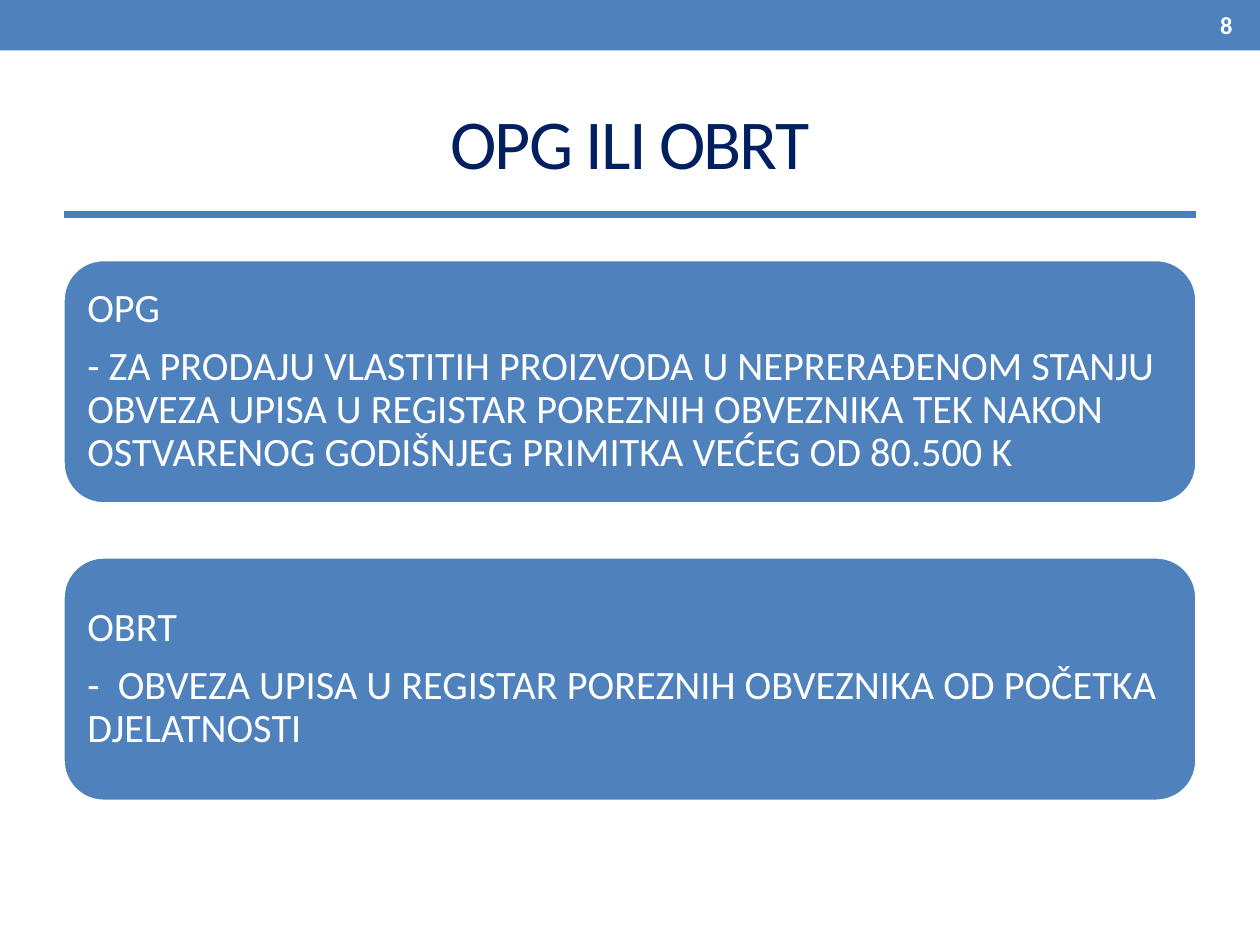
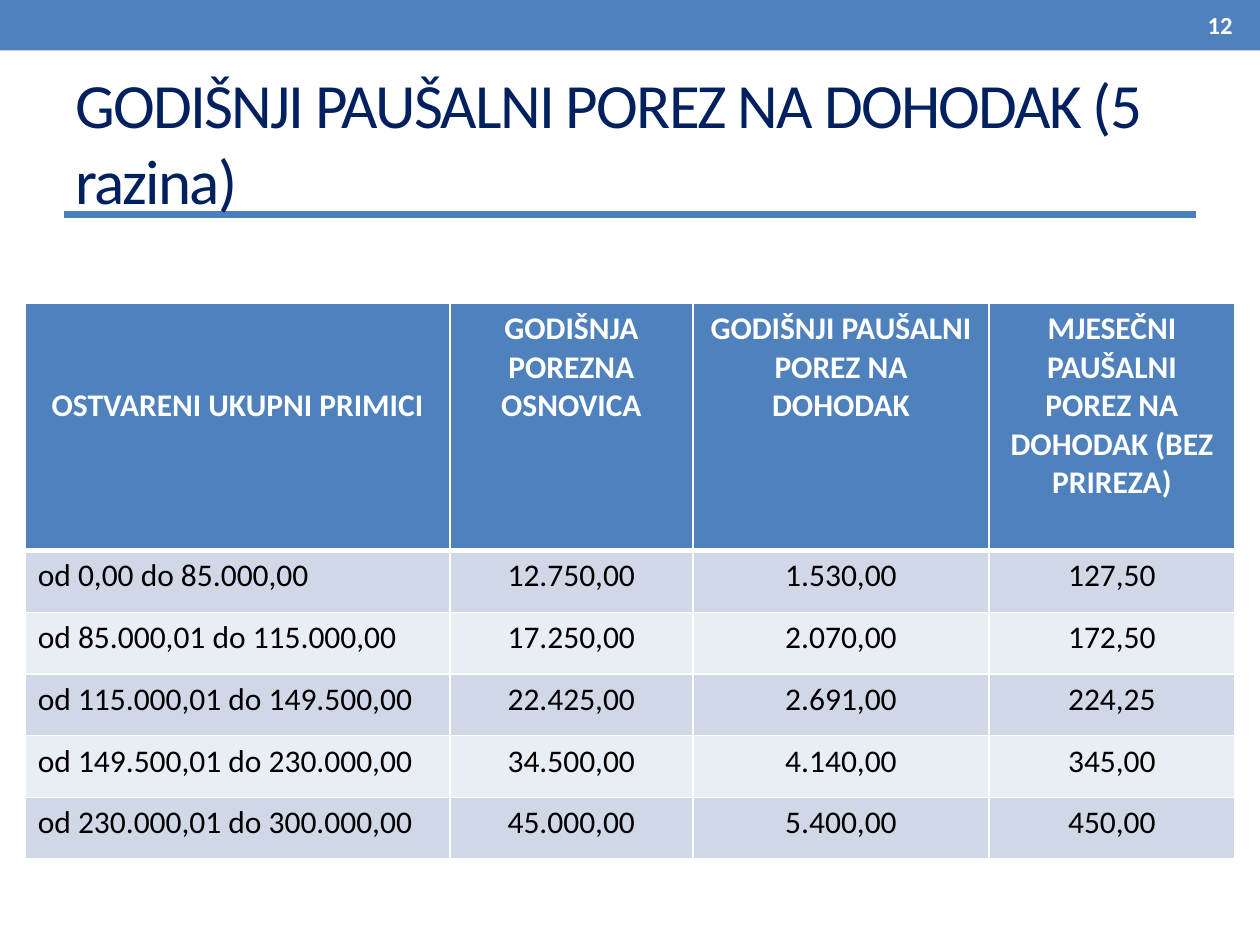
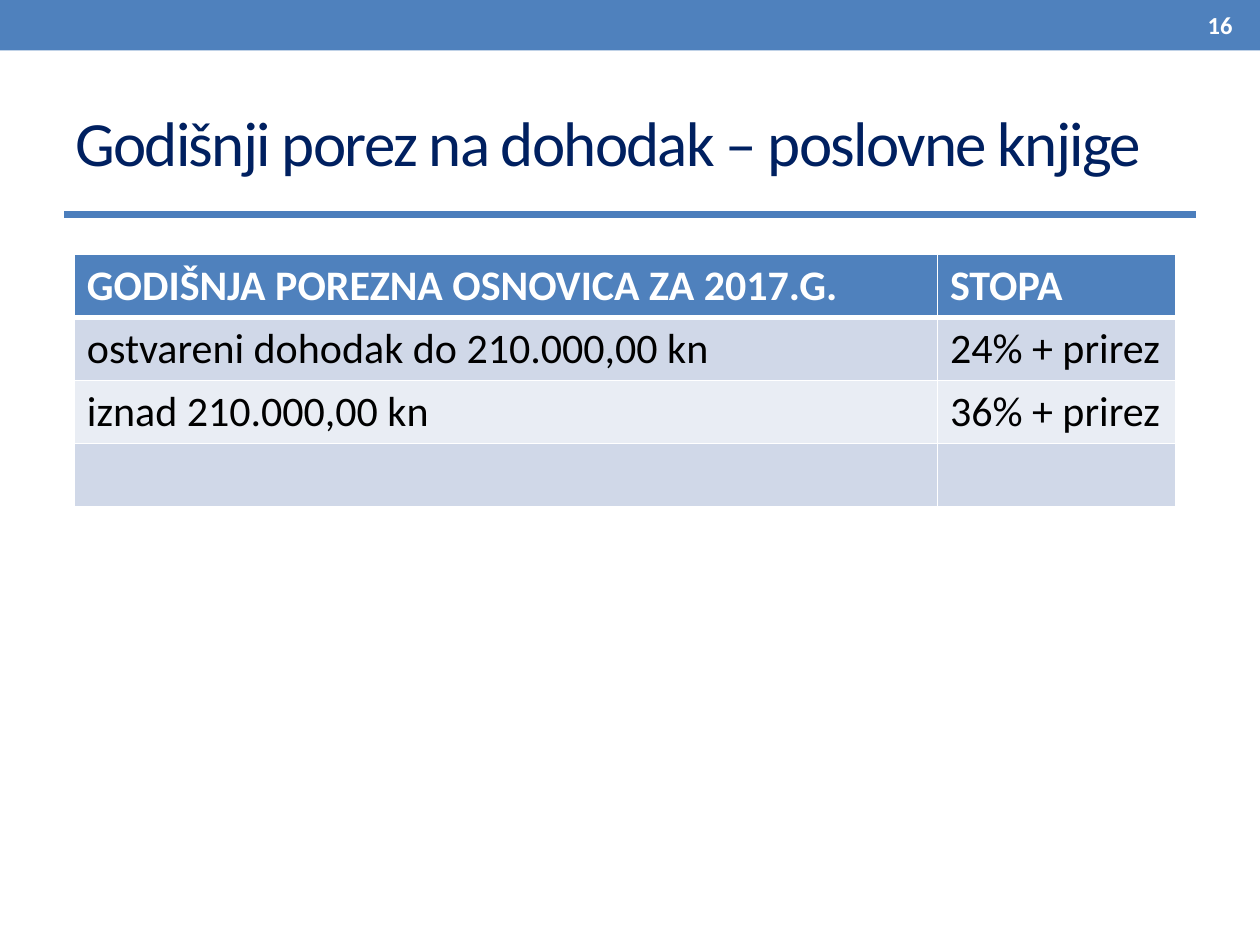
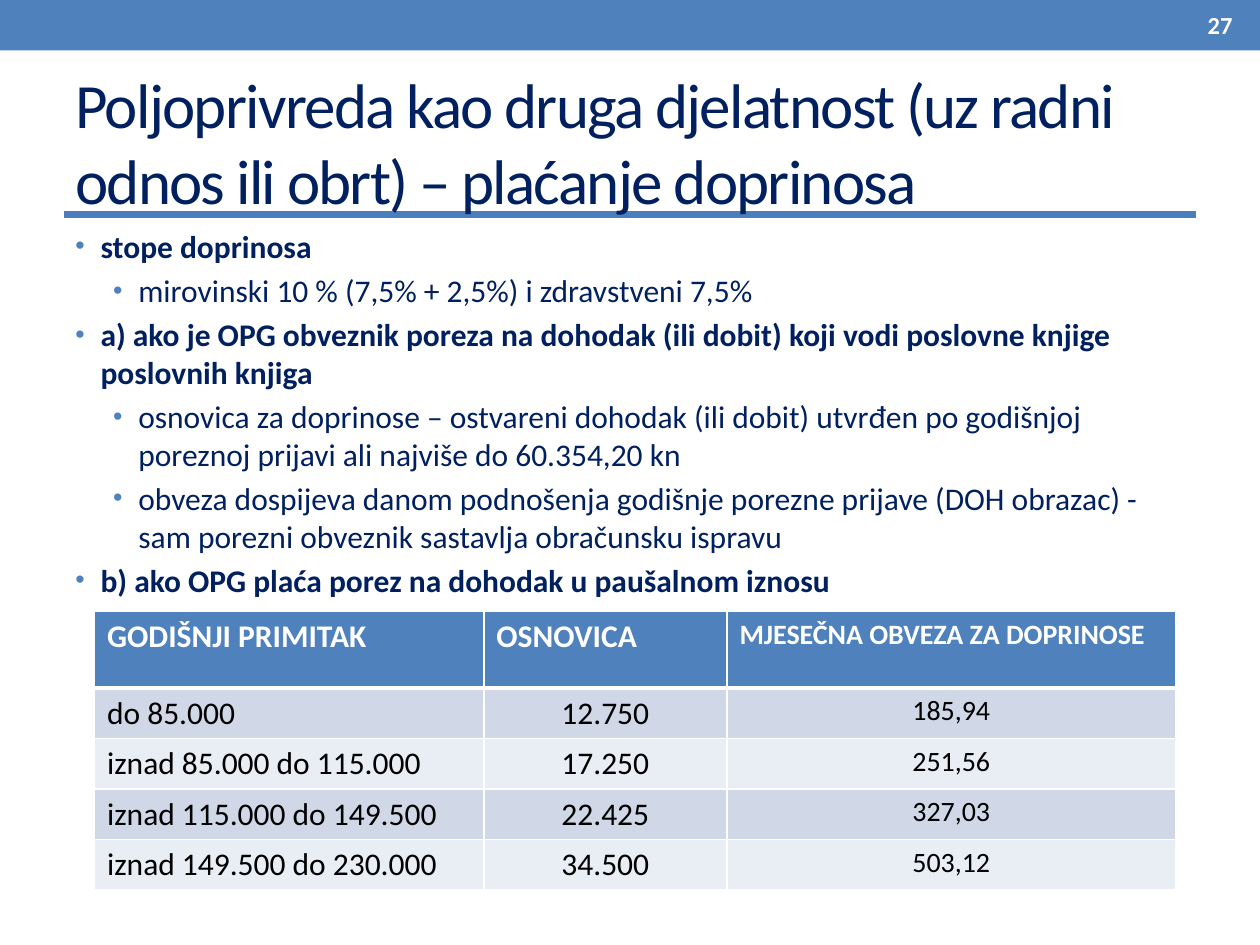
"""Build four slides on taxes and contributions for family farms and crafts."""
from lxml import etree
from pptx import Presentation
from pptx.dml.color import RGBColor
from pptx.enum.shapes import MSO_CONNECTOR, MSO_SHAPE
from pptx.enum.text import MSO_ANCHOR, PP_ALIGN
from pptx.oxml.ns import qn
from pptx.util import Inches, Pt

BLUE = RGBColor(0x4F, 0x81, 0xBD)
RULE_BLUE = RGBColor(0x4B, 0x7E, 0xBC)
NAVY = RGBColor(0x00, 0x20, 0x60)
PALE = RGBColor(0xD0, 0xD8, 0xE8)
PALER = RGBColor(0xE9, 0xED, 0xF4)
WHITE = RGBColor(0xFF, 0xFF, 0xFF)
BLACK = RGBColor(0x00, 0x00, 0x00)
LEFT, CENTER, RIGHT = PP_ALIGN.LEFT, PP_ALIGN.CENTER, PP_ALIGN.RIGHT
TOP, MIDDLE = MSO_ANCHOR.TOP, MSO_ANCHOR.MIDDLE
FONT = "Calibri"

CARDS = [
    ["OPG",
     "- ZA PRODAJU VLASTITIH PROIZVODA U NEPRERAĐENOM STANJU OBVEZA UPISA U REGISTAR "
     "POREZNIH OBVEZNIKA TEK NAKON OSTVARENOG GODIŠNJEG PRIMITKA VEĆEG OD 80.500 K"],
    ["OBRT",
     "-  OBVEZA UPISA U REGISTAR POREZNIH OBVEZNIKA OD POČETKA DJELATNOSTI"],
]

CONTRIBUTIONS = [
    (0, "stope doprinosa"),
    (1, "mirovinski 10 % (7,5% + 2,5%) i zdravstveni 7,5%"),
    (0, "a) ako je OPG obveznik poreza na dohodak (ili dobit) koji vodi poslovne knjige "
        "poslovnih knjiga"),
    (1, "osnovica za doprinose – ostvareni dohodak (ili dobit) utvrđen po godišnjoj "
        "poreznoj prijavi ali najviše do 60.354,20 kn"),
    (1, "obveza dospijeva danom podnošenja godišnje porezne prijave (DOH obrazac) - "
        "sam porezni obveznik sastavlja obračunsku ispravu"),
    (0, "b) ako OPG plaća porez na dohodak u paušalnom iznosu"),
]

FLAT_TAX = {
    "at": (0.2, 2.41),
    "widths": [3.37, 1.93, 2.35, 1.95],
    "heights": (1.96, 0.49),
    "sizes": [18, 18, 18, 18],
    "header_align": [CENTER] * 4,
    "body_align": [LEFT, CENTER, CENTER, CENTER],
    "rows": [
        ("OSTVARENI UKUPNI PRIMICI", "GODIŠNJA POREZNA OSNOVICA",
         "GODIŠNJI PAUŠALNI POREZ NA DOHODAK",
         "MJESEČNI PAUŠALNI POREZ NA DOHODAK (BEZ PRIREZA)"),
        ("od 0,00 do 85.000,00", "12.750,00", "1.530,00", "127,50"),
        ("od 85.000,01 do 115.000,00", "17.250,00", "2.070,00", "172,50"),
        ("od 115.000,01 do 149.500,00", "22.425,00", "2.691,00", "224,25"),
        ("od 149.500,01 do 230.000,00", "34.500,00", "4.140,00", "345,00"),
        ("od 230.000,01 do 300.000,00", "45.000,00", "5.400,00", "450,00"),
    ],
}

TAX_RATES = {
    "at": (0.59, 2.02),
    "widths": [6.85, 1.89],
    "heights": (0.5, 0.5),
    "sizes": [24, 24],
    "header_align": [LEFT] * 2,
    "body_align": [LEFT] * 2,
    "rows": [
        ("GODIŠNJA POREZNA OSNOVICA ZA 2017.G.", "STOPA"),
        ("ostvareni dohodak do 210.000,00 kn", "24% + prirez"),
        ("iznad 210.000,00 kn", "36% + prirez"),
        ("", ""),
    ],
}

MONTHLY_DUES = {
    "at": (0.75, 4.85),
    "widths": [3.09, 1.93, 3.56],
    "heights": (0.61, 0.4),
    "sizes": [18, 18, 16],
    "header_align": [LEFT] * 3,
    "body_align": [LEFT, CENTER, CENTER],
    "rows": [
        ("GODIŠNJI PRIMITAK", "OSNOVICA", "MJESEČNA OBVEZA ZA DOPRINOSE"),
        ("do 85.000", "12.750", "185,94"),
        ("iznad 85.000 do 115.000", "17.250", "251,56"),
        ("iznad 115.000 do 149.500", "22.425", "327,03"),
        ("iznad 149.500 do 230.000", "34.500", "503,12"),
    ],
}


def style(paragraph, size, color, bold=False, align=LEFT):
    paragraph.alignment = align
    font = paragraph.font
    font.name, font.size, font.bold = FONT, Pt(size), bold
    font.color.rgb = color


def add_text_box(slide, left, top, width, height, anchor):
    frame = slide.shapes.add_textbox(
        Inches(left), Inches(top), Inches(width), Inches(height)).text_frame
    frame.word_wrap = True
    frame.vertical_anchor = anchor
    return frame


def add_block(slide, preset, left, top, width, height):
    block = slide.shapes.add_shape(
        preset, Inches(left), Inches(top), Inches(width), Inches(height))
    block.shadow.inherit = False
    block.fill.solid()
    block.fill.fore_color.rgb = BLUE
    block.line.fill.background()
    return block


def add_page(deck, number, title, size=36, align=LEFT):
    slide = deck.slides.add_slide(deck.slide_layouts[6])
    add_block(slide, MSO_SHAPE.RECTANGLE, 0, 0, 10, 0.4)

    rule = slide.shapes.add_connector(
        MSO_CONNECTOR.STRAIGHT, Inches(0.51), Inches(1.7), Inches(9.49), Inches(1.7))
    rule.line.color.rgb = RULE_BLUE
    rule.line.width = Pt(4)
    etree.SubElement(rule._element.spPr, qn("a:effectLst"))

    heading = add_text_box(slide, 0.5, 0.58, 9, 1.08, MIDDLE).paragraphs[0]
    run = heading.add_run()
    run.text = title
    run._r.get_or_add_rPr().set("spc", "-100")
    style(heading, size, NAVY, align=align)

    page_number = add_text_box(slide, 9.09, 0.02, 0.79, 0.36, MIDDLE).paragraphs[0]
    page_number.text = str(number)
    style(page_number, 14, WHITE, True, RIGHT)
    return slide


def add_cards(slide, cards):
    height, pitch = 1.94, 2.36
    for index, lines in enumerate(cards):
        card = add_block(slide, MSO_SHAPE.ROUNDED_RECTANGLE,
                         0.5, 2.06 + index * pitch, 9, height)
        card.line.color.rgb = WHITE
        card.line.width = Pt(2)
        frame = card.text_frame
        frame.word_wrap = True
        frame.vertical_anchor = MIDDLE
        frame.margin_left = frame.margin_right = Inches(0.1)
        frame.margin_top = frame.margin_bottom = Inches(0.1)
        frame.text = "\n".join(lines)
        for paragraph in frame.paragraphs:
            paragraph.line_spacing = 0.9
            paragraph.space_after = Pt(8)
            style(paragraph, 23, WHITE)


def add_bullet(paragraph, margin):
    properties = paragraph._p.get_or_add_pPr()
    properties.set("marL", str(Inches(margin)))
    properties.set("indent", str(Inches(-0.2)))
    color = etree.SubElement(properties, qn("a:buClr"))
    etree.SubElement(color, qn("a:srgbClr"), val=str(BLUE))
    etree.SubElement(properties, qn("a:buSzPct"), val="85000")
    etree.SubElement(properties, qn("a:buFont"), typeface="Arial")
    etree.SubElement(properties, qn("a:buChar"), char="•")


def add_bullets(slide, items):
    frame = add_text_box(slide, 0.5, 1.75, 9, 5.75, TOP)
    frame.text = "\n".join(text for _, text in items)
    for index, (paragraph, (level, _)) in enumerate(zip(frame.paragraphs, items)):
        paragraph.level = level
        add_bullet(paragraph, 0.5 if level else 0.2)
        if index:
            paragraph.space_before = Pt(3.6)
        style(paragraph, 18, NAVY, bold=level == 0)


def add_borders(cell, bottom):
    properties = cell._tc.get_or_add_tcPr()
    for side, points in (("lnL", 1), ("lnR", 1), ("lnT", 1), ("lnB", bottom)):
        border = etree.SubElement(properties, qn("a:" + side), w=str(Pt(points)))
        fill = etree.SubElement(border, qn("a:solidFill"))
        etree.SubElement(fill, qn("a:srgbClr"), val=str(WHITE))


def add_grid(slide, spec):
    rows, widths = spec["rows"], spec["widths"]
    header_height, body_height = spec["heights"]
    heights = [header_height] + [body_height] * (len(rows) - 1)
    left, top = spec["at"]
    grid = slide.shapes.add_table(
        len(rows), len(widths), Inches(left), Inches(top),
        Inches(sum(widths)), Inches(sum(heights))).table
    for column, width in zip(grid.columns, widths):
        column.width = Inches(width)
    for r, values in enumerate(rows):
        is_header = r == 0
        grid.rows[r].height = Inches(heights[r])
        aligns = spec["header_align" if is_header else "body_align"]
        for c, value in enumerate(values):
            cell = grid.cell(r, c)
            add_borders(cell, 3 if is_header else 1)
            cell.fill.solid()
            cell.fill.fore_color.rgb = BLUE if is_header else PALE if r % 2 else PALER
            paragraph = cell.text_frame.paragraphs[0]
            if value:
                paragraph.text = value
            style(paragraph, spec["sizes"][c], WHITE if is_header else BLACK,
                  is_header, aligns[c])
    return grid


def main():
    deck = Presentation()
    deck.slide_width, deck.slide_height = Inches(10), Inches(7.5)

    add_cards(add_page(deck, 8, "OPG ILI OBRT", 40, CENTER), CARDS)

    flat_tax = add_grid(
        add_page(deck, 12, "GODIŠNJI PAUŠALNI POREZ NA DOHODAK (5 razina)"), FLAT_TAX)
    flat_tax.cell(0, 0).margin_top = Inches(0.66)

    add_grid(add_page(deck, 16, "Godišnji porez na dohodak – poslovne knjige"), TAX_RATES)

    second_activity = add_page(
        deck, 27, "Poljoprivreda kao druga djelatnost (uz radni odnos ili obrt) – "
                  "plaćanje doprinosa")
    add_bullets(second_activity, CONTRIBUTIONS)
    add_grid(second_activity, MONTHLY_DUES)

    deck.save("out.pptx")


if __name__ == "__main__":
    main()
